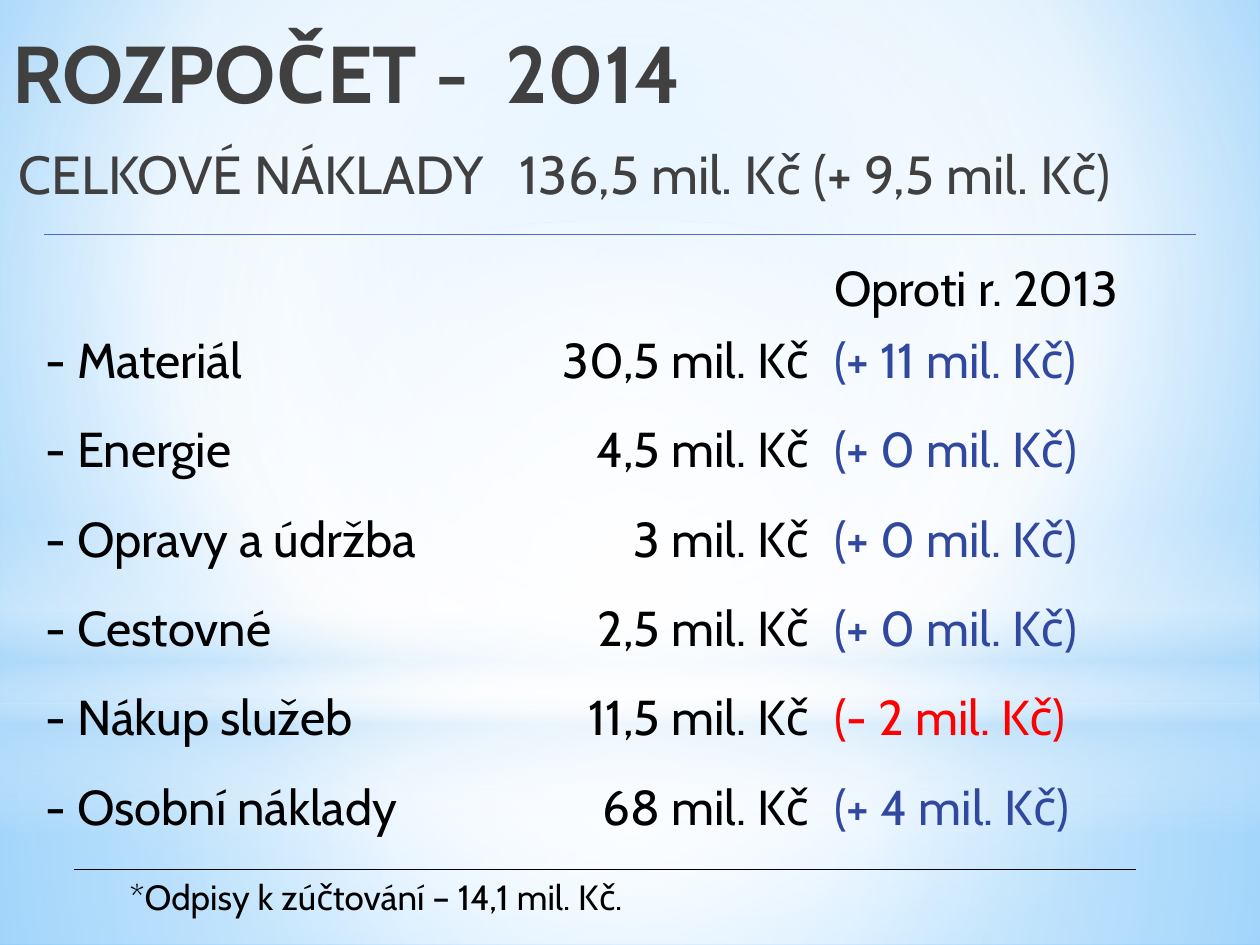
from lxml.etree import SubElement
from pptx import Presentation
from pptx.dml.color import RGBColor
from pptx.enum.shapes import MSO_CONNECTOR, MSO_SHAPE
from pptx.enum.text import MSO_ANCHOR, PP_ALIGN
from pptx.oxml.ns import qn
from pptx.util import Pt

COLOURS = {
    "black": "000000",
    "grey": "404040",
    "white": "FFFFFF",
    "rule": "4E67C8",
    "increase": "31489F",
    "decrease": "FF0000",
    "sky": "9ED5FF",
    "deep sky": "5BB9FF",
    "haze": "B4DCFA",
}
NO_STYLE = "{2D5ABB26-0587-4C30-8999-92F81FD0307C}"
CENTRE = (50, 50, 50, 50)
COSTS = [
    ("", "", "Oproti r. 2013", "black"),
    ("- Materiál", "30,5 mil. Kč", "(+ 11 mil. Kč)", "increase"),
    ("- Energie", "4,5 mil. Kč", "(+ 0 mil. Kč)", "increase"),
    ("- Opravy a údržba", "3 mil. Kč", "(+ 0 mil. Kč)", "increase"),
    ("- Cestovné", "2,5 mil. Kč", "(+ 0 mil. Kč)", "increase"),
    ("- Nákup služeb", "11,5 mil. Kč", "(- 2 mil. Kč)", "decrease"),
    ("- Osobní náklady", "68 mil. Kč", "(+ 4 mil. Kč)", "increase"),
]


class BudgetSlide:
    font_name = "Cabin"

    def __init__(self, presentation):
        self.slide = presentation.slides.add_slide(presentation.slide_layouts[6])

    def colour(self, name):
        return RGBColor.from_string(COLOURS[name])

    def gradient(self, fill, parent, stops, focus=None):
        fill.gradient()
        gradient = parent.find(".//" + qn("a:gradFill"))
        for child in list(gradient):
            gradient.remove(child)
        stop_list = SubElement(gradient, qn("a:gsLst"))
        for position, name, opacity in stops:
            stop = SubElement(stop_list, qn("a:gs"), pos=str(position * 1000))
            colour = SubElement(stop, qn("a:srgbClr"), val=COLOURS[name])
            if opacity < 100:
                SubElement(colour, qn("a:alpha"), val=str(opacity * 1000))
        if focus:
            circle = SubElement(gradient, qn("a:path"), path="circle")
            edges = {side: str(value * 1000) for side, value in zip("ltrb", focus)}
            SubElement(circle, qn("a:fillToRect"), **edges)
        else:
            SubElement(gradient, qn("a:lin"), ang="5400000", scaled="0")

    def background(self, stops, focus):
        self.gradient(self.slide.background.fill, self.slide.element, stops, focus)

    def glow(self, kind, top, height, stops, focus=None):
        shape = self.slide.shapes.add_shape(kind, 0, Pt(top), Pt(720), Pt(height))
        shape.shadow.inherit = False
        shape.line.fill.background()
        self.gradient(shape.fill, shape.element.spPr, stops, focus)

    def style(self, paragraph, size, colour, bold=False):
        paragraph.font.name = self.font_name
        paragraph.font.size = Pt(size)
        paragraph.font.bold = bold
        paragraph.font.color.rgb = self.colour(colour)

    def text(self, text, left, top, width, height, size, colour, bold=False):
        shape = self.slide.shapes.add_textbox(Pt(left), Pt(top), Pt(width), Pt(height))
        frame = shape.text_frame
        frame.word_wrap = True
        frame.vertical_anchor = MSO_ANCHOR.TOP
        frame.text = text
        self.style(frame.paragraphs[0], size, colour, bold)

    def line(self, left, right, y, colour):
        connector = self.slide.shapes.add_connector(
            MSO_CONNECTOR.STRAIGHT, Pt(left), Pt(y), Pt(right), Pt(y))
        connector.line.color.rgb = self.colour(colour)
        connector.line.width = Pt(0.75)
        SubElement(connector.element.spPr, qn("a:effectLst"))

    def table(self, rows, left, top, widths, heights, size):
        frame = self.slide.shapes.add_table(
            len(rows), len(widths), Pt(left), Pt(top), Pt(sum(widths)), Pt(sum(heights)))
        table = frame.table
        table.first_row = table.horz_banding = False
        frame.element.find(".//" + qn("a:tableStyleId")).text = NO_STYLE
        for column, width in zip(table.columns, widths):
            column.width = Pt(width)
        for row, height, (item, amount, change, change_colour) in zip(table.rows, heights, rows):
            row.height = Pt(height)
            contents = (
                (item, "black", PP_ALIGN.LEFT),
                (amount, "black", PP_ALIGN.RIGHT),
                (change, change_colour, PP_ALIGN.LEFT),
            )
            for cell, (text, colour, alignment) in zip(row.cells, contents):
                cell.fill.background()
                cell.text = text
                paragraph = cell.text_frame.paragraphs[0]
                paragraph.alignment = alignment
                self.style(paragraph, size, colour)


def main():
    presentation = Presentation()
    presentation.slide_width = Pt(720)
    presentation.slide_height = Pt(540)
    budget = BudgetSlide(presentation)

    budget.background(
        [(0, "sky", 100), (60, "white", 100), (100, "deep sky", 100)], (20, 10, 20, 60))
    budget.glow(MSO_SHAPE.RECTANGLE, 401.8, 138.2,
                [(0, "white", 91), (37, "white", 76), (100, "haze", 79)], CENTRE)
    budget.glow(MSO_SHAPE.RECTANGLE, 0, 401.8,
                [(0, "white", 89), (48, "white", 62), (100, "haze", 79)], CENTRE)
    budget.glow(MSO_SHAPE.RECTANGLE, 296.6, 180,
                [(0, "white", 0), (29, "white", 30), (45, "haze", 40),
                 (55, "white", 26), (65, "haze", 60), (100, "white", 0)])
    budget.glow(MSO_SHAPE.OVAL, 126, 401.8,
                [(0, "white", 100), (56, "white", 0)], CENTRE)

    budget.text("ROZPOČET -  2014", 0, 9.4, 720, 73.4, 46, "grey", True)
    budget.text("CELKOVÉ NÁKLADY   136,5 mil. Kč (+ 9,5 mil. Kč)",
                3.6, 77, 702, 57, 30.6, "grey")
    budget.line(25.2, 683.3, 133.9, "rule")
    budget.line(42.5, 649.4, 496.8, "black")
    budget.text("*Odpisy k zúčtování – 14,1 mil. Kč.", 67, 496.8, 584, 31.7, 20, "black")
    budget.table(COSTS, 18.7, 144.7, [241.2, 209.5, 229.7],
                 [38.2] + [51.1] * 5 + [69.8], 28)

    presentation.save("out.pptx")


if __name__ == "__main__":
    main()
